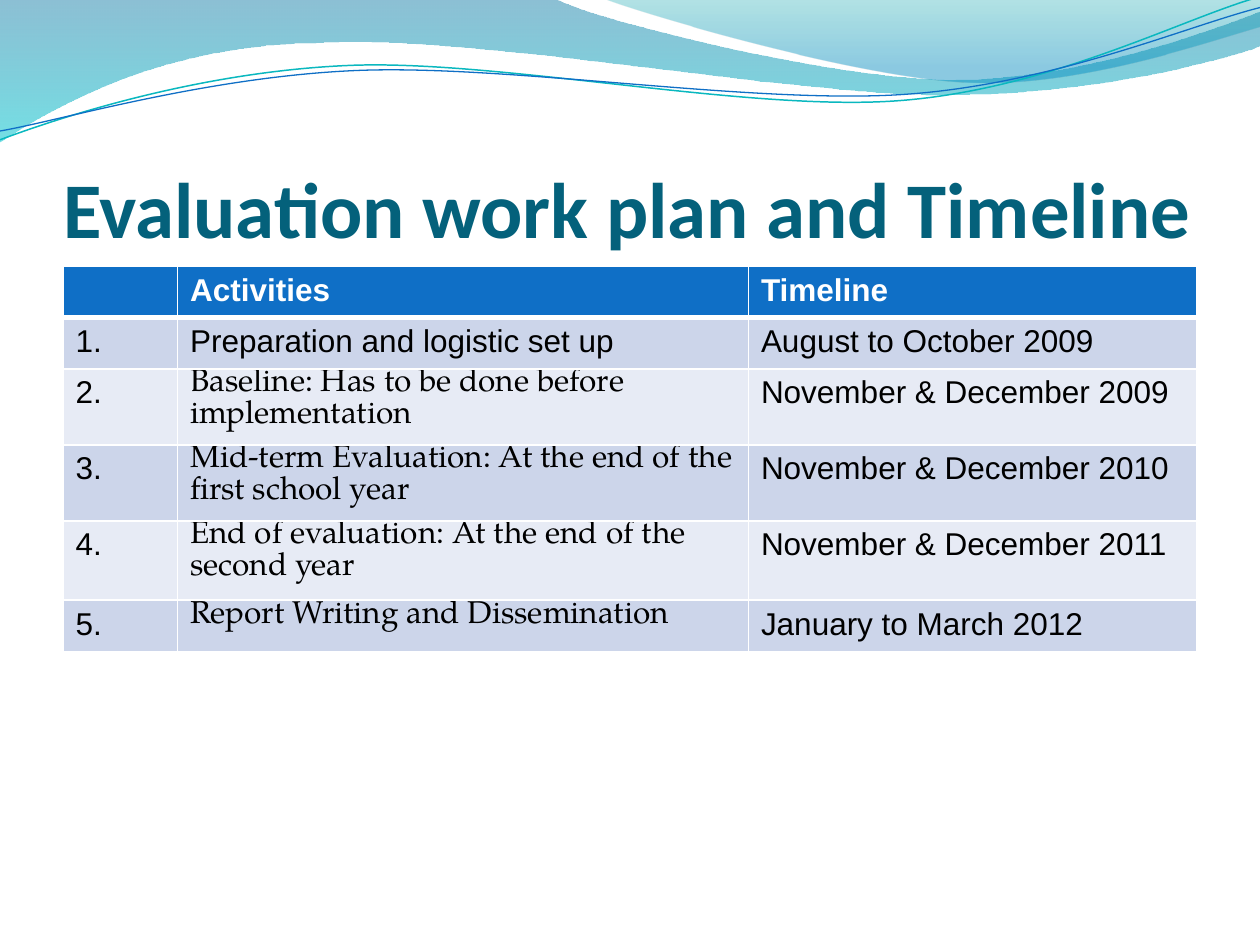
from lxml import etree
from pptx import Presentation
from pptx import util as u
from pptx.dml.color import RGBColor
from pptx.enum import text
from pptx.oxml import parse_xml
from pptx.oxml.ns import nsdecls, qn

WHITE, BLUE = "FFFFFF", "0F6FC6"


def paint(fill, color):
    fill.solid()
    fill.fore_color.rgb = RGBColor.from_string(color)


def bend(wave, segments, origin):
    """Replace the straight runs that stand for six-number segments by cubic curves."""
    steps = wave._element.findall(".//" + qn("a:lnTo"))
    for straight, segment in zip(steps, segments):
        if len(segment) == 6:
            curve = etree.Element(qn("a:cubicBezTo"))
            for x, y in zip(segment[::2], segment[1::2]):
                etree.SubElement(curve, qn("a:pt"),
                                 x=str(x - origin[0]), y=str(y - origin[1]))
            straight.getparent().replace(straight, curve)


prs = Presentation()
prs.slide_width, prs.slide_height = u.Inches(10), u.Inches(7.5)
slide = prs.slides.add_slide(prs.slide_layouts[5])
margin = prs.slide_width // 20
content_width = prs.slide_width - 2 * margin

# Waves along the top: points and cubic curves in hundredths of an inch,
# gradient stops (position, colour, opacity), line
waves = [
    ([(0, -1), (440, -1), (476, 17, 664, 63, 758, 63),
      (853, 63, 958, 26, 1000, 9), (1001, 36),
      (983, 44, 870, 76, 746, 75), (622, 75, 382, 28, 257, 34),
      (129, 35, 46, 83, -1, 113)],
     [(0, "0074A1", 45), (100, "00C6CF", 55)], None),
    ([(479, -1), (509, 11, 682, 62, 769, 65),
      (856, 69, 961, 32, 1000, 21), (1000, 0)],
     [(0, "00A1A9", 30), (80, "008BBF", 45)], None),
    ([(0, 111), (48, 93, 158, 57, 277, 52),
      (395, 47, 593, 89, 713, 80), (833, 71, 938, 15, 998, -2)],
     None, ("0AB8BF", 0.85)),
    ([(0, 104), (47, 96, 164, 61, 283, 56),
      (403, 51, 597, 83, 717, 75), (836, 67, 941, 21, 1000, 6)],
     None, (BLUE, 0.75)),
]
for (start, *segments), stops, line in waves:
    corners = [segment[-2:] for segment in segments]
    builder = slide.shapes.build_freeform(*start, scale=u.Inches(0.01))
    builder.add_line_segments(corners, close=stops is not None)
    wave = builder.convert_to_shape()
    wave.shadow.inherit = False
    bend(wave, segments, [min(axis) for axis in zip(start, *corners)])
    if stops:
        wave.line.fill.background()
        stop_xml = "".join(
            f'<a:gs pos="{pos * 1000}"><a:srgbClr val="{color}">'
            f'<a:alpha val="{opacity * 1000}"/></a:srgbClr></a:gs>'
            for pos, color, opacity in stops)
        gradient = parse_xml(
            f'<a:gradFill {nsdecls("a")} rotWithShape="1"><a:gsLst>{stop_xml}</a:gsLst>'
            '<a:lin ang="5400000" scaled="0"/></a:gradFill>')
        wave._element.spPr.find(qn("a:custGeom")).addnext(gradient)
    else:
        wave.fill.background()
        paint(wave.line.fill, line[0])
        wave.line.width = u.Pt(line[1])

title = slide.shapes.title
title.left, title.top = margin, u.Inches(0.77)
title.width, title.height = content_width, u.Inches(1.25)
frame = title.text_frame
frame.text = "Evaluation work plan and Timeline"
frame.word_wrap = True
frame.auto_size = text.MSO_AUTO_SIZE.NONE
frame.vertical_anchor = text.MSO_ANCHOR.BOTTOM
frame.margin_left = frame.margin_right = frame.margin_bottom = 0
frame.margin_top = u.Inches(0.05)
heading = frame.paragraphs[0]
heading.alignment = text.PP_ALIGN.LEFT
heading_font = heading.runs[0].font
heading_font.name, heading_font.size, heading_font.bold = "Calibri", u.Pt(45), True
paint(heading_font.fill, "04617B")

plan = [
    ("", "Activities", "Timeline"),
    ("1.", "Preparation and logistic set up", "August to October 2009"),
    ("2.", "Baseline: Has to be done before implementation", "November & December 2009"),
    ("3.", "Mid-term Evaluation: At the end of the first school year",
     "November & December 2010"),
    ("4.", "End of evaluation: At the end of the second year", "November & December 2011"),
    ("5.", "Report Writing and Dissemination", "January to March 2012"),
]
row_points = [29.2, 29.2, 43.4, 43.4, 45.4, 29.2]
column_widths = [0.91, 4.53, 3.56]
table = slide.shapes.add_table(len(plan), 3, margin, u.Pt(152.4), content_width,
                               u.Pt(sum(row_points))).table
for column, width in zip(table.columns, column_widths):
    column.width = u.Inches(width)
for r, (entries, height) in enumerate(zip(plan, row_points)):
    table.rows[r].height = u.Pt(height)
    header = r == 0
    for c, entry in enumerate(entries):
        cell = table.cell(r, c)
        cell.text = entry
        paint(cell.fill, BLUE if header else ("E7EBF5", "CCD5EA")[r % 2])
        serif = c == 1 and r > 1
        if serif:
            cell.margin_top = 0
        paragraph = cell.text_frame.paragraphs[0]
        paragraph.font.size = u.Pt(18)
        for run in paragraph.runs:
            run.font.name = "TeX Gyre Pagella" if serif else "Arial"
            run.font.size, run.font.bold = u.Pt(18), header
            paint(run.font.fill, WHITE if header else "000000")
        borders = {"L": 1, "R": 1, "T": 3 if r == 1 else 1, "B": 3 if header else 1}
        properties = cell._tc.get_or_add_tcPr()
        for place, (side, points) in enumerate(borders.items()):
            border = etree.Element(qn(f"a:ln{side}"), w=str(u.Pt(points)))
            solid = etree.SubElement(border, qn("a:solidFill"))
            etree.SubElement(solid, qn("a:srgbClr"), val=WHITE)
            properties.insert(place, border)

prs.save("out.pptx")
